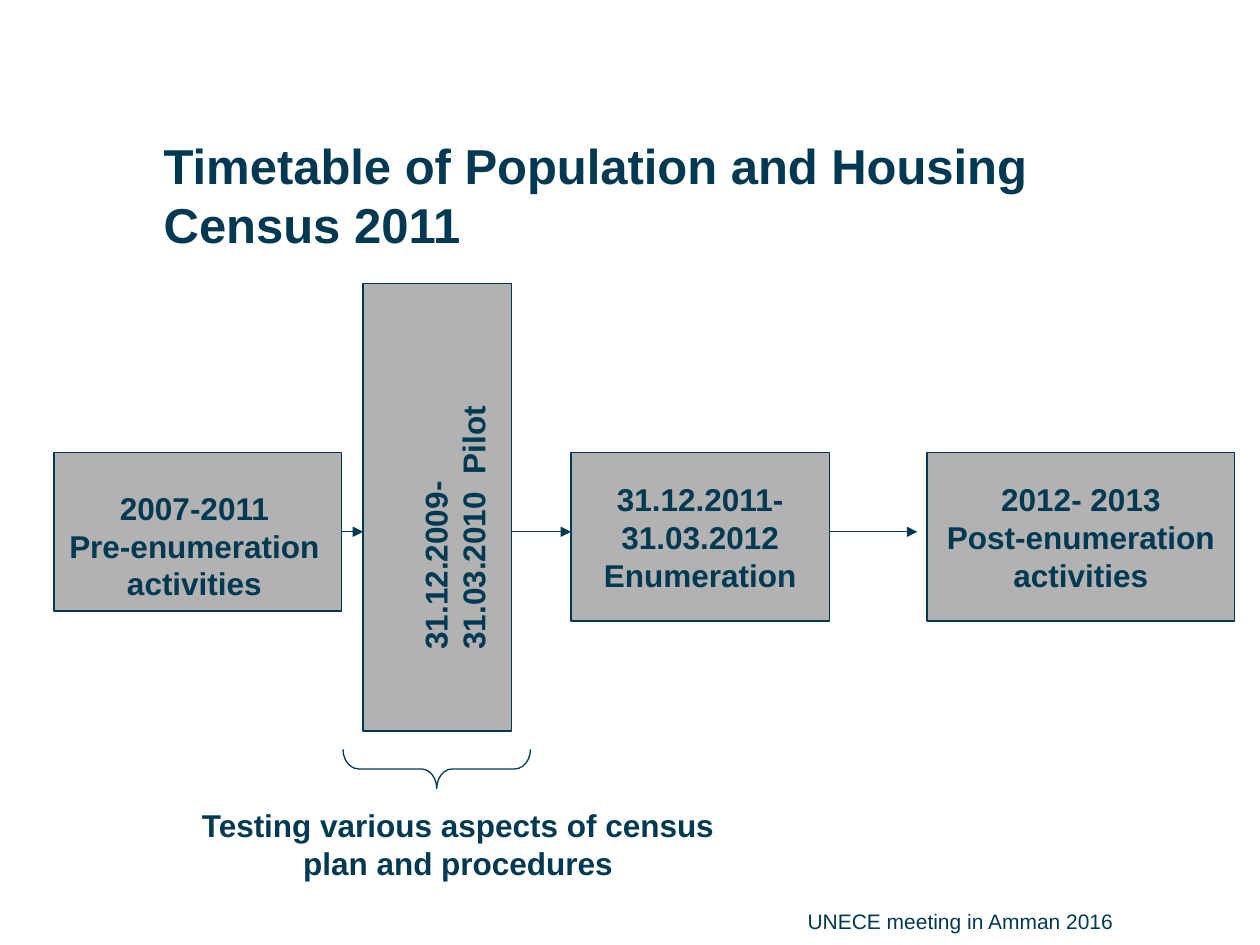
import pptx
import pptx.util
import pptx.dml.color
import pptx.enum.shapes
import pptx.enum.text
import pptx.oxml
import pptx.oxml.ns

Cm, Pt = pptx.util.Cm, pptx.util.Pt
RGBColor = pptx.dml.color.RGBColor
MSO_SHAPE = pptx.enum.shapes.MSO_SHAPE
ANCHOR = pptx.enum.text.MSO_ANCHOR
ALIGN = pptx.enum.text.PP_ALIGN

NAVY = RGBColor(0x00, 0x39, 0x51)
GREY = RGBColor(0xB2, 0xB2, 0xB2)

TITLE = "Timetable of Population and Housing Census 2011"
FOOTER = "UNECE meeting in Amman 2016"
PILOT = "31.12.2009-31.03.2010  Pilot"
CAPTION = ["Testing various aspects of census", "plan and procedures"]
PREPARATION = ["2007-2011", "Pre-enumeration", "activities"]

# Places are left, top, width, height in centimetres.
STAGES = [
    ((1.09, 9.12, 5.79, 3.2), []),
    ((7.32, 5.72, 3, 9.02), []),
    ((11.51, 9.12, 5.21, 3.4), ["31.12.2011-", "31.03.2012", "Enumeration"]),
    ((18.69, 9.12, 6.2, 3.4), ["2012- 2013", "Post-enumeration", "activities"]),
]
ARROW_HEIGHT = 10.72
ARROW_GAPS = [0, 0, 0.2]

BOLD = {"name": "Arial", "size": Pt(18), "bold": True}
HEADING = {**BOLD, "size": Pt(28)}
SMALL = {**BOLD, "size": Pt(12), "bold": False}
NO_INSETS = dict.fromkeys(
    ["margin_left", "margin_top", "margin_right", "margin_bottom"], 0)


def apply(target, values):
    for name, value in values.items():
        setattr(target, name, value)


def write(shape, lines, font=BOLD, align=ALIGN.CENTER, **frame_format):
    frame = shape.text_frame
    apply(frame, {"word_wrap": False, **frame_format})
    frame.text = "\n".join(lines)
    for para in frame.paragraphs:
        para.alignment = align
        apply(para.font, font)
        para.font.color.rgb = NAVY


def outline(shape):
    shape.line.color.rgb = NAVY
    shape.line.width = Pt(0.75)


def add_outlined(slide, kind, place):
    shape = slide.shapes.add_shape(kind, *map(Cm, place))
    shape.shadow.inherit = False
    outline(shape)
    return shape


def add_label(slide, place, lines, **text_format):
    label = slide.shapes.add_textbox(*map(Cm, place))
    write(label, lines, **text_format)
    return label


def add_arrow(slide, start, end):
    arrow = slide.shapes.add_connector(
        pptx.enum.shapes.MSO_CONNECTOR.STRAIGHT,
        Cm(start), Cm(ARROW_HEIGHT), Cm(end), Cm(ARROW_HEIGHT))
    outline(arrow)
    head = pptx.oxml.parse_xml(
        f'<a:tailEnd {pptx.oxml.ns.nsdecls("a")} type="triangle"/>')
    arrow.line._get_or_add_ln().append(head)
    arrow._element.spPr.append(pptx.oxml.parse_xml(
        f'<a:effectLst {pptx.oxml.ns.nsdecls("a")}/>'))


def main():
    deck = pptx.Presentation()
    deck.slide_width, deck.slide_height = Cm(25.4), Cm(19.05)
    page = deck.slides.add_slide(deck.slide_layouts[5])

    title = page.shapes.title
    apply(title, {"left": Cm(3.3), "top": Cm(2.84),
                  "width": Cm(20.88), "height": Cm(2.26)})
    write(title, [TITLE], HEADING, ALIGN.LEFT, word_wrap=True,
          auto_size=pptx.enum.text.MSO_AUTO_SIZE.NONE,
          vertical_anchor=ANCHOR.BOTTOM, **NO_INSETS)

    for place, lines in STAGES:
        box = add_outlined(page, MSO_SHAPE.RECTANGLE, place)
        box.fill.solid()
        box.fill.fore_color.rgb = GREY
        if lines:
            write(box, lines, vertical_anchor=ANCHOR.MIDDLE)

    places = [place for place, _ in STAGES]
    for before, after, gap in zip(places, places[1:], ARROW_GAPS):
        add_arrow(page, before[0] + before[2], after[0] - gap)

    add_label(page, (1.14, 9.73, 5.56, 2.54), PREPARATION)
    pilot = add_label(page, (5.74, 9.04, 6.83, 1.78), [PILOT],
                      align=ALIGN.LEFT, word_wrap=True)
    pilot.rotation = 270

    brace = add_outlined(page, MSO_SHAPE.LEFT_BRACE, (8.41, 13.61, 0.79, 3.78))
    brace.fill.background()
    brace.rotation = 270
    brace.adjustments[0] = 0.4
    add_label(page, (3.71, 16.13, 11.05, 1.78), CAPTION)

    footer = add_label(page, (16.28, 18.42, 8.05, 0.64), [FOOTER], font=SMALL,
                       align=ALIGN.LEFT, word_wrap=True, **NO_INSETS)
    footer.text_frame.paragraphs[0].line_spacing = 0.8

    deck.save("out.pptx")


if __name__ == "__main__":
    main()
